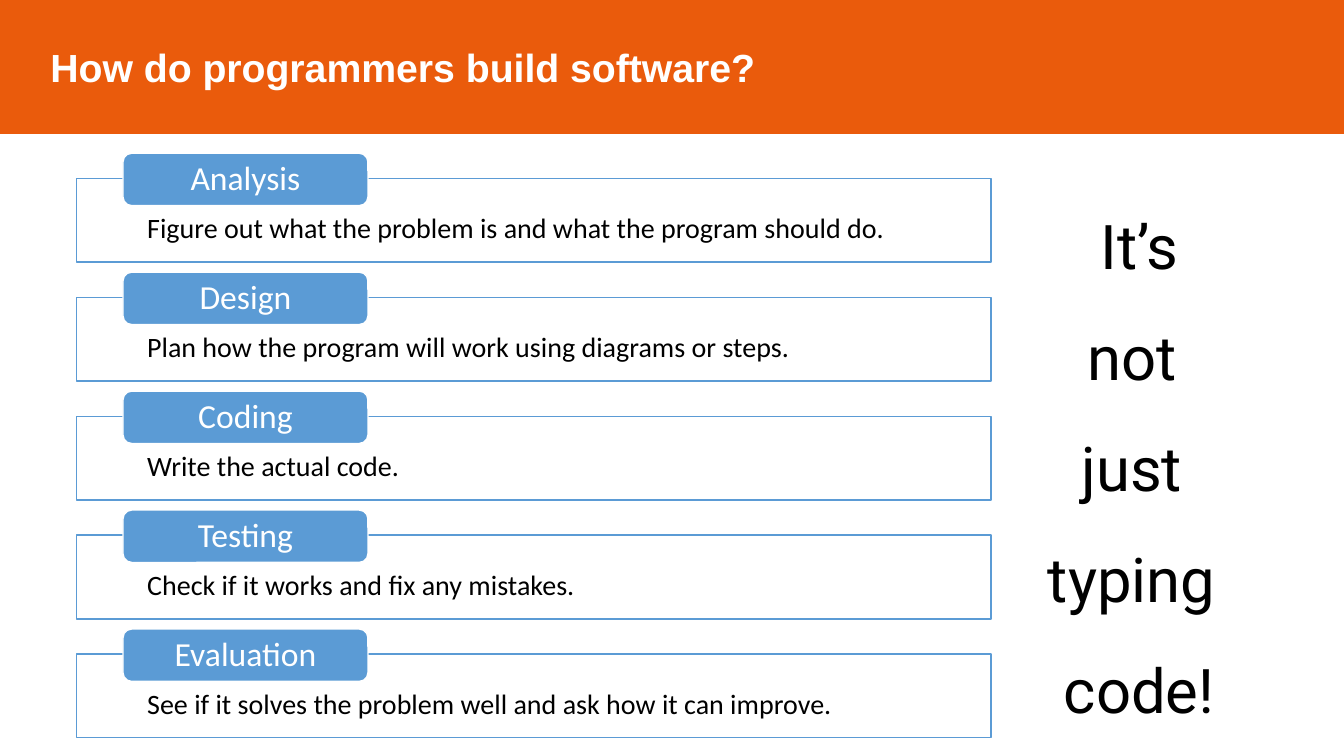
"""Build a slide on the five stages of making software."""
from dataclasses import dataclass

from lxml import etree
from pptx import Presentation
from pptx.dml.color import RGBColor
from pptx.enum import shapes, text
from pptx.oxml import ns
from pptx.util import Inches, Pt


@dataclass(frozen=True)
class Theme:
    orange: str = "EA5B0C"
    blue: str = "5B9BD5"
    white: str = "FFFFFF"
    black: str = "000000"
    title_size: int = 28
    stage_size: int = 24
    detail_size: int = 20
    slogan_size: int = 44


theme = Theme()


def add_box(kind, left, top, width, height, fill, line):
    box = slide.shapes.add_shape(kind, Inches(left), Inches(top), Inches(width), Inches(height))
    box.shadow.inherit = False
    box.fill.solid()
    box.fill.fore_color.rgb = RGBColor.from_string(fill)
    box.line.color.rgb = RGBColor.from_string(line)
    box.line.width = Pt(1)
    return box


def write(box, words, font, size, color, align, spacing=1.0, anchor="MIDDLE", insets=(0.1, 0.05, 0.1, 0.05)):
    frame = box.text_frame
    frame.text = words
    frame.word_wrap = True
    frame.vertical_anchor = text.MSO_ANCHOR[anchor]
    frame.margin_left, frame.margin_top, frame.margin_right, frame.margin_bottom = map(Inches, insets)
    for paragraph in frame.paragraphs:
        paragraph.alignment = text.PP_ALIGN[align]
        paragraph.line_spacing = spacing
        for run in paragraph.runs:
            run.font.name = font
            run.font.size = Pt(size)
            run.font.color.rgb = RGBColor.from_string(color)
    return frame


deck = Presentation()
deck.slide_width, deck.slide_height = Inches(13.33), Inches(7.5)
slide = deck.slides.add_slide(deck.slide_layouts[6])

banner = add_box(shapes.MSO_SHAPE.RECTANGLE, 0, 0, 13.33, 1.32, theme.orange, theme.orange)
title = write(banner, "How do programmers build software?", "Arial", theme.title_size, theme.white,
              "LEFT", insets=(0.5, 0.05, 0.1, 0.05))
title.paragraphs[0].runs[0].font.bold = True

stages = [
    ("Analysis", "Figure out what the problem is and what the program should do."),
    ("Design", "Plan how the program will work using diagrams or steps."),
    ("Coding", "Write the actual code."),
    ("Testing", "Check if it works and fix any mistakes."),
    ("Evaluation", "See if it solves the problem well and ask how it can improve."),
]
first_top, pitch = 1.77, 1.18

for row, (stage, detail) in enumerate(stages):
    top = first_top + row * pitch
    panel = add_box(shapes.MSO_SHAPE.RECTANGLE, 0.76, top, 9.07, 0.83, theme.white, theme.blue)
    panel_color = panel.fill._xPr.find(ns.qn("a:solidFill"))[0]
    etree.SubElement(panel_color, ns.qn("a:alpha"), val="90000")
    write(panel, detail, "Calibri", theme.detail_size, theme.black, "LEFT", 0.9, "TOP",
          (0.7, 0.36, 0.7, 0.16))

    tab = add_box(shapes.MSO_SHAPE.ROUNDED_RECTANGLE, 1.22, top - 0.25, 2.43, 0.52, theme.blue, theme.white)
    write(tab, stage, "Calibri", theme.stage_size, theme.white, "CENTER", 0.9, insets=(0.24, 0, 0.24, 0))

slogan = slide.shapes.add_textbox(Inches(10.24), Inches(1.65), Inches(2.12), Inches(5.55))
write(slogan, "It’s\nnot \njust \ntyping \ncode!", "Roboto", theme.slogan_size, theme.black,
      "CENTER", 1.5, "TOP")

deck.save("out.pptx")
